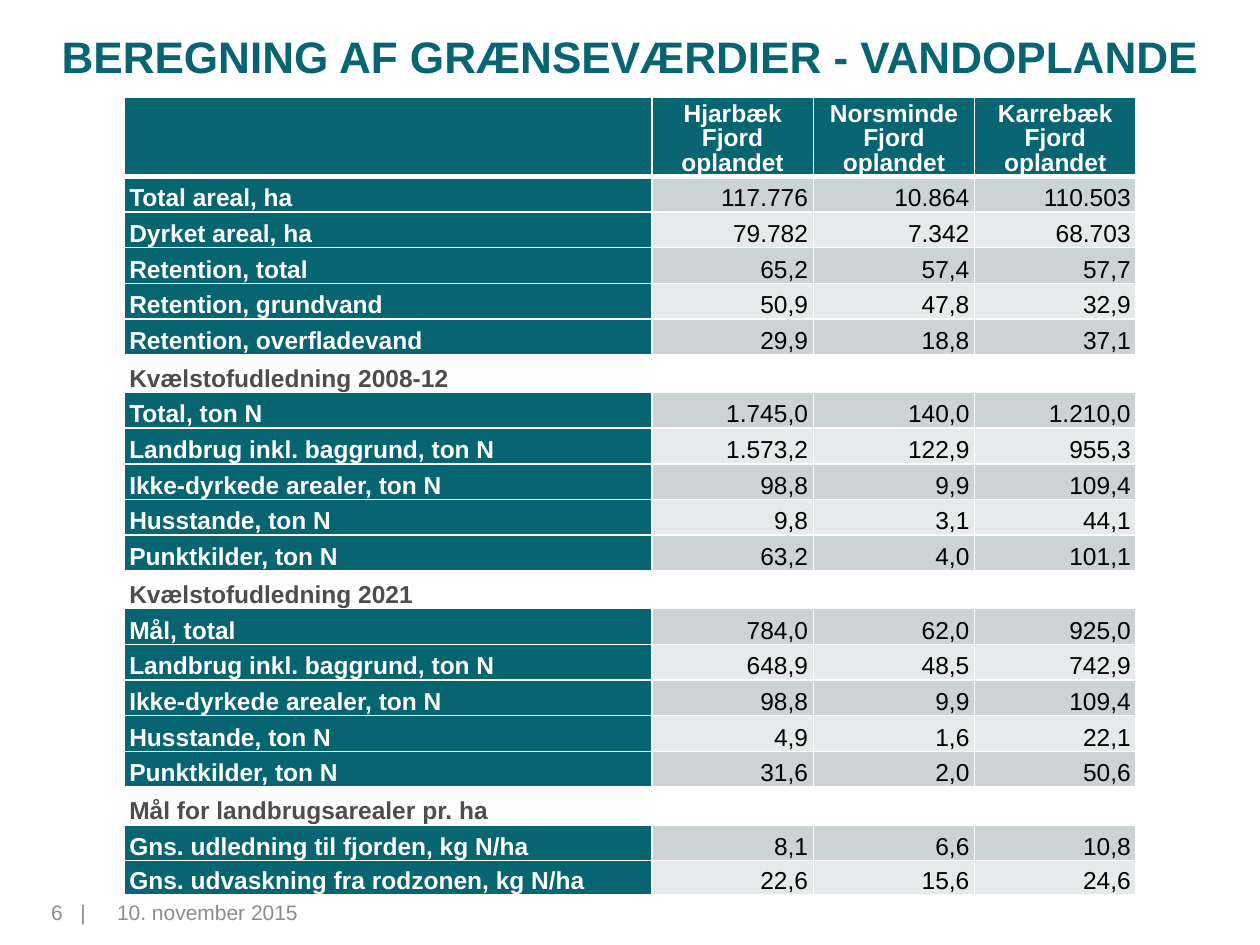
import pptx
import pptx.dml.color
import pptx.enum.text
import pptx.oxml
import pptx.util
import lxml.etree

Pt = pptx.util.Pt
ALIGN = pptx.enum.text.PP_ALIGN
ANCHOR = pptx.enum.text.MSO_ANCHOR
NS = "http://schemas.openxmlformats.org/drawingml/2006/main"
HUES = {"teal": "076471", "white": "FFFFFF", "black": "000000",
        "dark": "4C4D4E", "gray": "8C8C8C", "odd": "CCD3D5", "even": "E7EAEB"}

HEAD = ["", "Hjarbæk Fjord oplandet", "Norsminde Fjord oplandet",
        "Karrebæk Fjord oplandet"]
# Each group: heading (or none) and its rows
GROUPS = [
    (None, [
        ("Total areal, ha", "117.776", "10.864", "110.503"),
        ("Dyrket areal, ha", "79.782", "7.342", "68.703"),
        ("Retention, total", "65,2", "57,4", "57,7"),
        ("Retention, grundvand", "50,9", "47,8", "32,9"),
        ("Retention, overfladevand", "29,9", "18,8", "37,1")]),
    ("Kvælstofudledning 2008-12", [
        ("Total, ton N", "1.745,0", "140,0", "1.210,0"),
        ("Landbrug inkl. baggrund, ton N", "1.573,2", "122,9", "955,3"),
        ("Ikke-dyrkede arealer, ton N", "98,8", "9,9", "109,4"),
        ("Husstande, ton N", "9,8", "3,1", "44,1"),
        ("Punktkilder, ton N", "63,2", "4,0", "101,1")]),
    ("Kvælstofudledning 2021", [
        ("Mål, total", "784,0", "62,0", "925,0"),
        ("Landbrug inkl. baggrund, ton N", "648,9", "48,5", "742,9"),
        ("Ikke-dyrkede arealer, ton N", "98,8", "9,9", "109,4"),
        ("Husstande, ton N", "4,9", "1,6", "22,1"),
        ("Punktkilder, ton N", "31,6", "2,0", "50,6")]),
    ("Mål for landbrugsarealer pr. ha", [
        ("Gns. udledning til fjorden, kg N/ha", "8,1", "6,6", "10,8"),
        ("Gns. udvaskning fra rodzonen, kg N/ha", "22,6", "15,6", "24,6")]),
]


class Deck:
    """Holds the text style and the current slide."""

    def __init__(self, slide, face="Arial"):
        self.slide = slide
        self.face = face

    def style(self, para, size, hue, bold=False, align=ALIGN.LEFT):
        para.alignment = align
        for run in para.runs:
            run.font.name = self.face
            run.font.size = Pt(size)
            run.font.bold = bold
            run.font.color.rgb = pptx.dml.color.RGBColor.from_string(HUES[hue])

    def text(self, box, words, size, hue, bold=False, align=ALIGN.LEFT,
             anchor=ANCHOR.TOP, inset=7.2, tab=None):
        frame = self.slide.shapes.add_textbox(*map(Pt, box)).text_frame
        frame.word_wrap = True
        frame.vertical_anchor = anchor
        frame.margin_left = Pt(inset)
        frame.text = words
        para = frame.paragraphs[0]
        if tab:
            tabs = lxml.etree.SubElement(para._p.get_or_add_pPr(), f"{{{NS}}}tabLst")
            lxml.etree.SubElement(tabs, f"{{{NS}}}tab", pos=str(Pt(tab)), algn="l")
        self.style(para, size, hue, bold, align)

    def edge(self, cell, base):
        """Draw white cell borders; base is the width of the lower one."""
        props = cell._tc.get_or_add_tcPr()
        for spot, (side, width) in enumerate(
                [("L", 1), ("R", 1), ("T", 1), ("B", base)]):
            props.insert(spot, pptx.oxml.parse_xml(
                f'<a:ln{side} xmlns:a="{NS}" w="{Pt(width)}"><a:solidFill>'
                f'<a:srgbClr val="{HUES["white"]}"/></a:solidFill></a:ln{side}>'))

    def cell(self, cell, words, fill, hue, bold, align, base=1):
        cell.margin_left = cell.margin_right = Pt(3)
        cell.margin_top = cell.margin_bottom = 0
        cell.vertical_anchor = ANCHOR.BOTTOM
        cell.text_frame.text = words
        para = cell.text_frame.paragraphs[0]
        para.line_spacing = Pt(14)
        self.style(para, 14, hue, bold, align)
        if fill:
            cell.fill.solid()
            cell.fill.fore_color.rgb = pptx.dml.color.RGBColor.from_string(HUES[fill])
        else:
            cell.fill.background()
        self.edge(cell, base)

    def table(self, left, top, cols, rows):
        grid = self.slide.shapes.add_table(
            len(rows), len(cols), Pt(left), Pt(top), Pt(sum(cols)), Pt(452)).table
        grid.first_row = grid.horz_banding = False
        for col, width in zip(grid.columns, cols):
            col.width = Pt(width)
        for row, (high, cells) in zip(grid.rows, rows):
            row.height = Pt(high)
            for cell, args in zip(row.cells, cells):
                self.cell(cell, *args)


def fill_rows():
    """Return (height, cell arguments) for every row; stripes restart per group."""
    rows = [(45.2, [(word, "teal", "white", True, ALIGN.CENTER, 3) for word in HEAD])]
    for title, lines in GROUPS:
        if title:
            rows.append((20.4, [(word, None, "dark", True, ALIGN.LEFT)
                                for word in (title, "", "", "")]))
        for spot, (name, *nums) in enumerate(lines):
            band = "even" if spot % 2 else "odd"
            rows.append((20.4, [(name, "teal", "white", True, ALIGN.LEFT)]
                         + [(num, band, "black", False, ALIGN.RIGHT) for num in nums]))
    rows[-1] = (19.3, rows[-1][1])
    return rows


def main():
    show = pptx.Presentation()
    show.slide_width, show.slide_height = Pt(720), Pt(540)
    deck = Deck(show.slides.add_slide(show.slide_layouts[6]))
    deck.text((8.6, 9.4, 702.8, 45.4), "BEREGNING AF GRÆNSEVÆRDIER - VANDOPLANDE",
              25.2, "teal", True, ALIGN.CENTER, ANCHOR.MIDDLE)
    deck.text((59.8, 510.5, 167.8, 28.8), "10. november 2015", 12, "gray")
    deck.text((0, 510.5, 56.2, 28.8), "6\t|", 12, "gray", inset=29.2, tab=16.7)
    deck.table(70.9, 55.6, [301.7] + [92.2] * 3, fill_rows())
    show.save("out.pptx")


if __name__ == "__main__":
    main()
